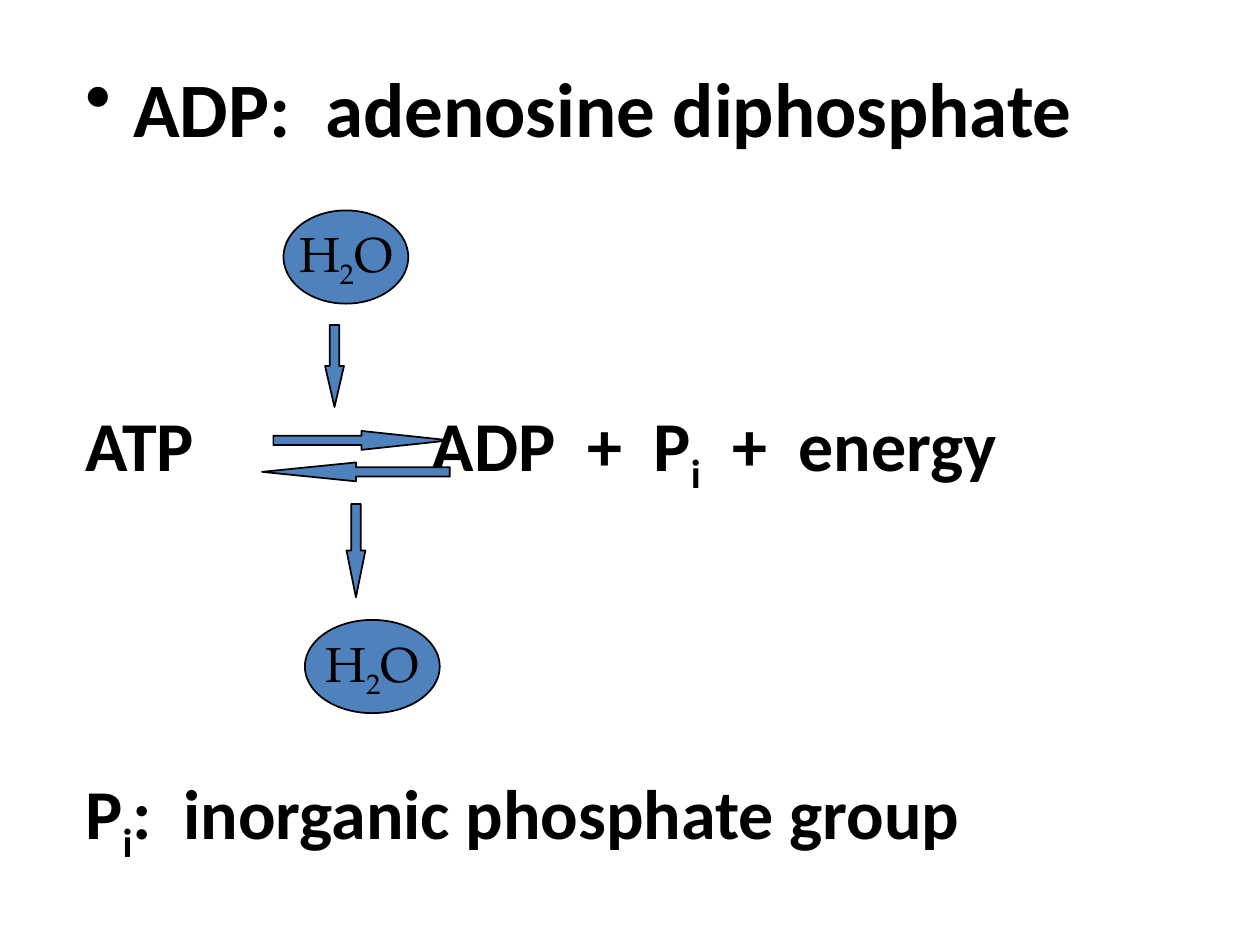
from pptx import Presentation
from pptx.dml.color import RGBColor
from pptx.enum import shapes, text
from pptx.oxml import parse_xml
from pptx.oxml.ns import nsdecls, qn
from pptx.util import Inches, Pt

BLUE = "4F81BD"
BLACK = "000000"
ARROW_THICKNESS = 0.15


def color(hex_value):
    return RGBColor.from_string(hex_value)


def add_runs(paragraph, pieces):
    for wording, is_subscript in pieces:
        run = paragraph.add_run()
        run.text = wording
        if is_subscript:
            run.font._element.set("baseline", "-25000")


def style(paragraph, font_name, size, bold=False):
    font = paragraph.font
    font.name, font.size, font.bold = font_name, Pt(size), bold
    font.color.rgb = color(BLACK)


def add_bullet(paragraph, indent):
    properties = paragraph._p.get_or_add_pPr()
    properties.set("marL", str(Inches(indent)))
    properties.set("indent", str(-Inches(indent)))
    bullet = parse_xml(f'<a:buChar {nsdecls("a")} char="•"/>')
    properties.insert_element_before(bullet, "a:tabLst", "a:defRPr")


def add_tab_stop(paragraph, position):
    properties = paragraph._p.get_or_add_pPr()
    stops = parse_xml(
        f'<a:tabLst {nsdecls("a")}><a:tab pos="{Inches(position)}" algn="l"/></a:tabLst>')
    properties.insert_element_before(stops, "a:defRPr")


def add_body(slide):
    body = slide.shapes.add_textbox(Inches(0.58), Inches(0.43), Inches(8.5), Inches(6.5))
    frame = body.text_frame
    frame.word_wrap = True
    heading, reaction, note = frame.paragraphs[0], frame.add_paragraph(), frame.add_paragraph()

    add_runs(heading, [("ADP:  adenosine diphosphate", False)])
    add_runs(reaction, [("ATP\tADP  +  P", False), ("i", True), ("  +  energy", False)])
    add_runs(note, [("P", False), ("i", True), (":  inorganic phosphate group", False)])

    for paragraph, size, gap in ((heading, 44, 0), (reaction, 40, 142), (note, 40, 156)):
        style(paragraph, "Calibri", size, bold=True)
        paragraph.space_before = Pt(gap)
    add_bullet(heading, 0.38)
    add_tab_stop(reaction, 2.75)


def add_outlined(slide, preset, left, top, width, height):
    shape = slide.shapes.add_shape(
        preset, Inches(left), Inches(top), Inches(width), Inches(height))
    shape.shadow.inherit = False
    shape.fill.solid()
    shape.fill.fore_color.rgb = color(BLUE)
    shape.line.color.rgb = color(BLACK)
    shape.line.width = Pt(1)
    return shape


def add_arrow(slide, preset, left, top, length):
    is_vertical = preset == shapes.MSO_SHAPE.DOWN_ARROW
    size = (ARROW_THICKNESS, length) if is_vertical else (length, ARROW_THICKNESS)
    arrow = add_outlined(slide, preset, left, top, *size)
    arrow.adjustments[0] = 0.5
    arrow.adjustments[1] = length / 2 / ARROW_THICKNESS


def add_water(slide, left, top, width):
    water = add_outlined(slide, shapes.MSO_SHAPE.OVAL, left, top, width, 0.74)
    frame = water.text_frame
    frame.word_wrap = False
    frame.vertical_anchor = text.MSO_ANCHOR.MIDDLE
    formula = frame.paragraphs[0]
    formula.alignment = text.PP_ALIGN.CENTER
    add_runs(formula, [("H", False), ("2", True), ("O", False)])
    style(formula, "TeX Gyre Pagella", 28)


def main():
    presentation = Presentation()
    presentation.slide_width, presentation.slide_height = Inches(10), Inches(7.5)
    slide = presentation.slides.add_slide(presentation.slide_layouts[6])

    add_body(slide)
    preset = shapes.MSO_SHAPE
    add_arrow(slide, preset.RIGHT_ARROW, 2.17, 3.42, 1.4)
    add_arrow(slide, preset.LEFT_ARROW, 2.08, 3.67, 1.49)
    add_water(slide, 2.25, 1.67, 0.99)
    add_water(slide, 2.42, 4.92, 1.07)
    add_arrow(slide, preset.DOWN_ARROW, 2.58, 2.58, 0.65)
    add_arrow(slide, preset.DOWN_ARROW, 2.75, 4, 0.74)

    presentation.save("out.pptx")


if __name__ == "__main__":
    main()
